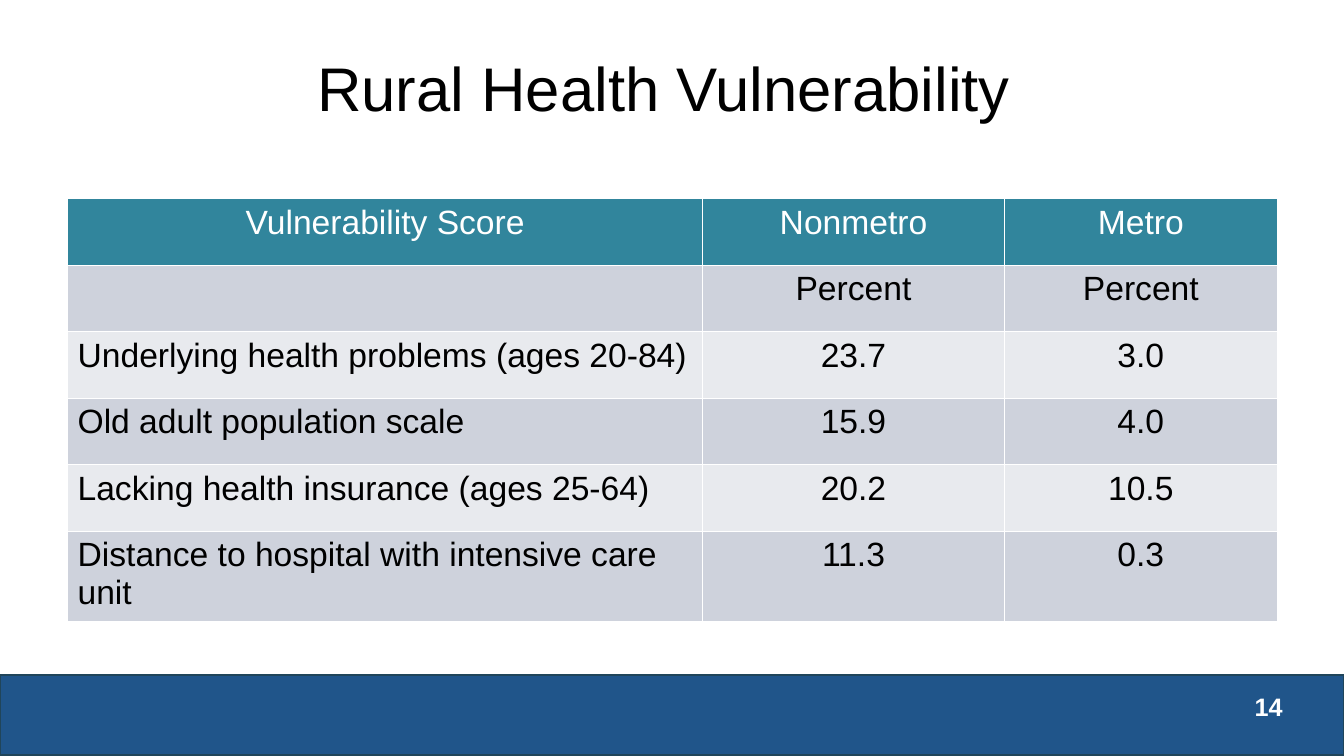
import pptx
import pptx.util
import pptx.dml.color
import pptx.enum.shapes
import pptx.enum.text
import pptx.oxml

COLORS = {
    "bar": "20558A", "bar_line": "20455A", "header": "31859C",
    "band_dark": "CED2DC", "band_light": "E8EAEE",
    "white": "FFFFFF", "black": "000000",
}
Inches = pptx.util.Inches
Align = pptx.enum.text.PP_ALIGN
Anchor = pptx.enum.text.MSO_ANCHOR


def rgb(name):
    return pptx.dml.color.RGBColor.from_string(COLORS[name])


def write(frame, text, size, color, alignment, bold=False):
    paragraph = frame.paragraphs[0]
    paragraph.alignment = alignment
    run = paragraph.add_run()
    run.text = text
    run.font.name = "Arial"
    run.font.size = pptx.util.Pt(size)
    run.font.bold = bold
    run.font.color.rgb = rgb(color)
    return paragraph


presentation = pptx.Presentation()
presentation.slide_width = Inches(13.33)
presentation.slide_height = Inches(7.5)
slide = presentation.slides.add_slide(presentation.slide_layouts[6])

# Footer bar
bar = slide.shapes.add_shape(
    pptx.enum.shapes.MSO_SHAPE.RECTANGLE,
    0, Inches(6.7), presentation.slide_width, Inches(0.79))
bar.shadow.inherit = False
bar.fill.solid()
bar.fill.fore_color.rgb = rgb("bar")
bar.line.color.rgb = rgb("bar_line")
bar.line.width = pptx.util.Pt(1.5)

# Title
title = slide.shapes.add_textbox(Inches(1.27), Inches(0.17), Inches(10.8), Inches(1.48))
title.text_frame.word_wrap = True
title.text_frame.vertical_anchor = Anchor.MIDDLE
heading = write(title.text_frame, "Rural Health Vulnerability ", 44, "black", Align.CENTER)
heading.line_spacing = 0.9

# Vulnerability table
rows = [
    ("Vulnerability Score", "Nonmetro", "Metro"),
    ("", "Percent", "Percent"),
    ("Underlying health problems (ages 20-84)", "23.7", "3.0"),
    ("Old adult population scale", "15.9", "4.0"),
    ("Lacking health insurance (ages 25-64)", "20.2", "10.5"),
    ("Distance to hospital with intensive care unit", "11.3", "0.3"),
]
column_widths = (6.3, 2.99, 2.71)
row_height = 0.66
table = slide.shapes.add_table(
    len(rows), len(column_widths), Inches(0.67), Inches(1.97),
    Inches(sum(column_widths)), Inches(row_height * len(rows))).table
for column, width in zip(table.columns, column_widths):
    column.width = Inches(width)

for row_index, values in enumerate(rows):
    table.rows[row_index].height = Inches(row_height)
    is_header = row_index == 0
    band = "header" if is_header else ("band_light", "band_dark")[row_index % 2]
    for column_index, value in enumerate(values):
        cell = table.cell(row_index, column_index)
        if value:
            centered = is_header or column_index > 0
            write(cell.text_frame, value, 24, "white" if is_header else "black",
                  Align.CENTER if centered else Align.LEFT)
        # Borders come before the fill in the cell properties
        properties = cell._tc.get_or_add_tcPr()
        for side in ("lnL", "lnR", "lnT", "lnB"):
            properties.append(pptx.oxml.parse_xml(
                f'<a:{side} xmlns:a="http://schemas.openxmlformats.org/drawingml/2006/main"'
                f' w="{pptx.util.Pt(1)}"><a:solidFill><a:srgbClr val="{COLORS["white"]}"/>'
                f'</a:solidFill></a:{side}>'))
        cell.fill.solid()
        cell.fill.fore_color.rgb = rgb(band)

# Page number
page_number = slide.shapes.add_textbox(Inches(10.95), Inches(6.81), Inches(1.87), Inches(0.4))
page_number.text_frame.word_wrap = True
write(page_number.text_frame, "14", 18, "white", Align.RIGHT, bold=True)

presentation.save("out.pptx")
